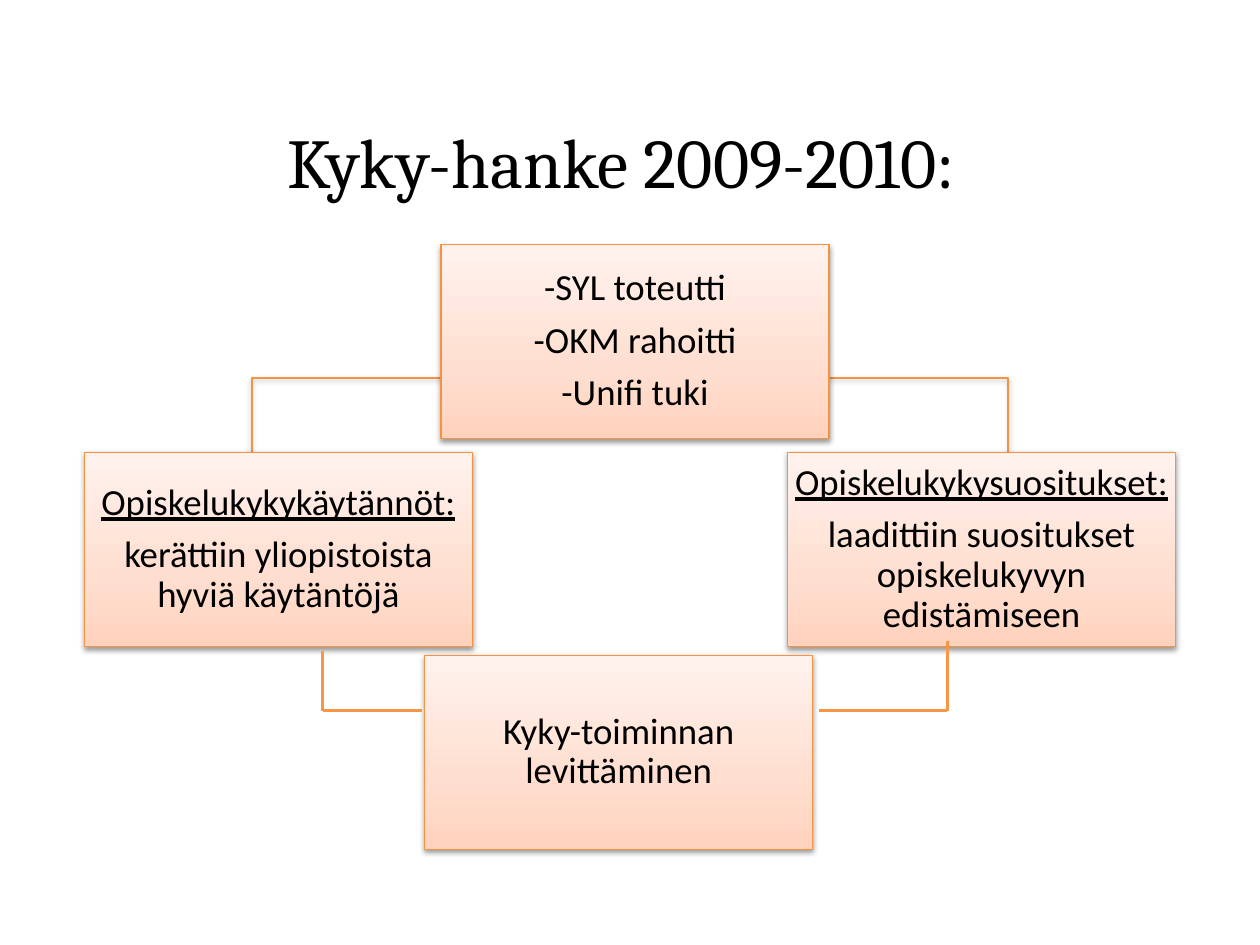
from copy import deepcopy

from lxml import etree
from pptx import Presentation
from pptx.dml.color import RGBColor
from pptx.enum.shapes import MSO_CONNECTOR as Connector, MSO_SHAPE as Shape
from pptx.enum.text import MSO_ANCHOR as Anchor, PP_ALIGN as Align
from pptx.oxml.ns import qn
from pptx.util import Inches, Pt

COLORS = {
    "text": "000000", "border": "F69240", "connector": "F79646",
    "bottom": "FFD2BD", "middle": "FFDED0", "top": "FFF2ED",
}
GRADIENT = [(0, "bottom"), (0.35, "middle"), (1, "top")]
BOX_WIDTH, BOX_HEIGHT = 3.08, 1.54
DROP = 0.11

TITLE = "Kyky-hanke 2009-2010:"
BOXES = [
    (3.5, 1.94, ["-SYL toteutti", "-OKM rahoitti", "-Unifi tuki"], False),
    (0.67, 3.59, ["Opiskelukykykäytännöt:",
                  "kerättiin yliopistoista hyviä käytäntöjä"], True),
    (6.25, 3.59, ["Opiskelukykysuositukset:",
                  "laadittiin suositukset opiskelukyvyn edistämiseen"], True),
    (3.37, 5.2, ["Kyky-toiminnan levittäminen"], False),
]
LOWER_LINKS = [
    [(2.56, 5.17), (2.56, 5.64), (3.35, 5.64)],
    [(7.52, 5.09), (7.52, 5.64), (6.5, 5.64)],
]


def color(name):
    return RGBColor.from_string(COLORS[name])


def write_text(shape, lines, size, font, margin=0.1, spacing=None, after=0,
               underline_first=False):
    frame = shape.text_frame
    frame.word_wrap = True
    frame.vertical_anchor = Anchor.MIDDLE
    frame.margin_left = frame.margin_right = Inches(margin)
    frame.margin_top = frame.margin_bottom = Inches(min(margin, 0.05))
    for index, line in enumerate(lines):
        paragraph = frame.paragraphs[0] if index == 0 else frame.add_paragraph()
        paragraph.alignment = Align.CENTER
        paragraph.line_spacing = spacing
        paragraph.space_after = Pt(after)
        run = paragraph.add_run()
        run.text = line
        run.font.size = Pt(size)
        run.font.name = font
        run.font.color.rgb = color("text")
        run.font.underline = underline_first and index == 0


def add_border_and_shadow(shape):
    shape.line.color.rgb = color("border")
    shape.line.width = Pt(0.75)
    shape.shadow.inherit = False
    effects = shape._element.spPr.find(qn("a:effectLst"))
    shadow = etree.SubElement(effects, qn("a:outerShdw"), blurRad=str(Pt(3.1)),
                              dist=str(Pt(1.6)), dir="5400000", rotWithShape="0")
    shade = etree.SubElement(shadow, qn("a:srgbClr"), val=COLORS["text"])
    etree.SubElement(shade, qn("a:alpha"), val="38000")


def fill_gradient(shape):
    shape.fill.gradient()
    shape.fill.gradient_angle = 90
    stop_list = shape._element.spPr.find(qn("a:gradFill")).find(qn("a:gsLst"))
    stop_list.append(deepcopy(stop_list[0]))
    for stop, (position, name) in zip(shape.fill.gradient_stops, GRADIENT):
        stop.position = position
        stop.color.rgb = color(name)


def add_elbow(shapes, points):
    builder = shapes.build_freeform(*points[0], scale=Inches(1))
    builder.add_line_segments(points[1:], close=False)
    elbow = builder.convert_to_shape()
    elbow.fill.background()
    add_border_and_shadow(elbow)


def add_box(shapes, left, top, lines, underline_first):
    box = shapes.add_shape(Shape.RECTANGLE, Inches(left), Inches(top),
                           Inches(BOX_WIDTH), Inches(BOX_HEIGHT))
    fill_gradient(box)
    add_border_and_shadow(box)
    write_text(box, lines, 21, "Calibri", margin=0.01, spacing=0.9, after=7.35,
               underline_first=underline_first)


def add_line(shapes, start, end):
    line = shapes.add_connector(Connector.STRAIGHT, *map(Inches, start + end))
    line.line.color.rgb = color("connector")
    line.line.width = Pt(2)
    etree.SubElement(line._element.spPr, qn("a:effectLst"))


def main():
    presentation = Presentation()
    presentation.slide_width, presentation.slide_height = Inches(10), Inches(7.5)
    shapes = presentation.slides.add_slide(presentation.slide_layouts[6]).shapes

    title = shapes.add_textbox(Inches(0.43), Inches(0.84), Inches(9), Inches(0.87))
    write_text(title, [TITLE], 40, "Cambria")

    root, *children = BOXES[:3]
    root_center, root_bottom = root[0] + BOX_WIDTH / 2, root[1] + BOX_HEIGHT
    for left, *_ in reversed(children):
        center = left + BOX_WIDTH / 2
        add_elbow(shapes, [(root_center, root_bottom), (center, root_bottom),
                           (center, root_bottom + DROP)])
    for box in BOXES:
        add_box(shapes, *box)
    for points in LOWER_LINKS:
        for start, end in zip(points, points[1:]):
            add_line(shapes, start, end)

    presentation.save("out.pptx")


if __name__ == "__main__":
    main()
